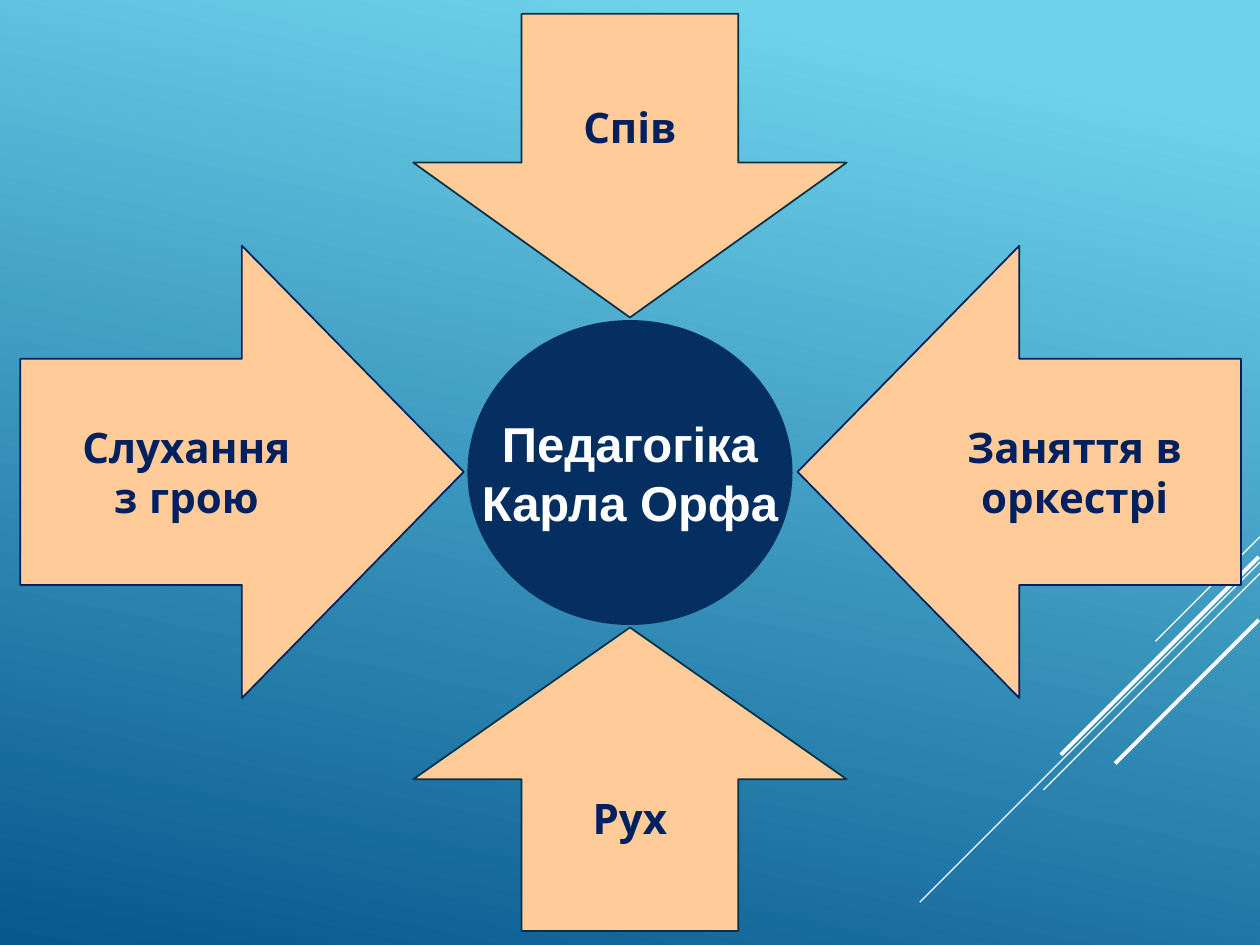
from lxml.etree import SubElement
from pptx import Presentation
from pptx.dml.color import RGBColor
from pptx.enum.shapes import MSO_CONNECTOR as Connector, MSO_SHAPE as Shape
from pptx.enum.text import MSO_ANCHOR as Anchor, PP_ALIGN as Align
from pptx.oxml.ns import qn
from pptx.util import Inches, Pt

COLORS = {
    "sky": "6ED2EB", "sea": "06588E", "white": "FFFFFF", "hub": "052F61",
    "peach": "FFCC99", "navy": "002060", "teal": "043148",
}


def rgb(name):
    return RGBColor.from_string(COLORS[name])


class OrffSlide:
    """Draws the elements of the slide in one shared style."""

    def __init__(self, slide):
        self.slide = slide

    def background(self, start, end, clockwise):
        fill = self.slide.background.fill
        fill.gradient()
        fill.gradient_angle = 360 - clockwise
        for stop, color, position in zip(fill.gradient_stops, (start, end), (0.1, 1)):
            stop.color.rgb = rgb(color)
            stop.position = position

    def ray(self, x, y, length, width):
        ends = [Inches(v) for v in (x, y, x - length, y + length)]
        ray = self.slide.shapes.add_connector(Connector.STRAIGHT, *ends)
        ray.line.color.rgb = rgb("white")
        ray.line.width = Pt(width)
        SubElement(ray._element.spPr, qn("a:effectLst"))

    def block(self, kind, box, text, fill, outline=None, font="Quicksand",
              size=24, color="navy", wrap=False):
        block = self.slide.shapes.add_shape(kind, *[Inches(v) for v in box])
        block.shadow.inherit = False
        block.fill.solid()
        block.fill.fore_color.rgb = rgb(fill)
        if outline:
            block.line.color.rgb = rgb(outline)
            block.line.width = Pt(1)
        else:
            block.line.fill.background()
        frame = block.text_frame
        frame.word_wrap = wrap
        frame.vertical_anchor = Anchor.MIDDLE
        frame.text = text
        for paragraph in frame.paragraphs:
            paragraph.alignment = Align.CENTER
            for run in paragraph.runs:
                run.font.name = font
                run.font.size = Pt(size)
                run.font.bold = True
                run.font.color.rgb = rgb(color)
        return block

    def arrow(self, kind, box, text, outline, wrap=False):
        return self.block(kind, box, text, "peach", outline, wrap=wrap)


def main():
    deck = Presentation()
    deck.slide_width, deck.slide_height = Inches(10), Inches(7.5)
    orff = OrffSlide(deck.slides.add_slide(deck.slide_layouts[6]))
    orff.background("sky", "sea", 102)

    for ray in [
        (10, 4.26, 0.83, 0.75),
        (10, 4.46, 2.7, 0.75),
        (10, 4.55, 1.72, 0.75),
        (9.99, 4.42, 1.57, 2.25),
        (9.99, 4.92, 1.14, 2.25),
    ]:
        orff.ray(*ray)

    orff.block(Shape.OVAL, (3.71, 2.54, 2.58, 2.42), "Педагогіка\nКарла Орфа",
               "hub", font="Arial", size=28, color="white")
    orff.arrow(Shape.RIGHT_ARROW, (0.16, 1.95, 3.52, 3.59), "Слухання\nз грою", "navy")
    orff.arrow(Shape.LEFT_ARROW, (6.33, 1.95, 3.52, 3.59), "Заняття в\nоркестрі", "navy")
    singing = orff.arrow(Shape.DOWN_ARROW, (3.28, 0.11, 3.44, 2.41), "Спів", "teal", True)
    singing.adjustments[1] = 0.51
    orff.arrow(Shape.UP_ARROW, (3.28, 4.98, 3.44, 2.41), "Рух", "teal", True)

    deck.save("out.pptx")


if __name__ == "__main__":
    main()
